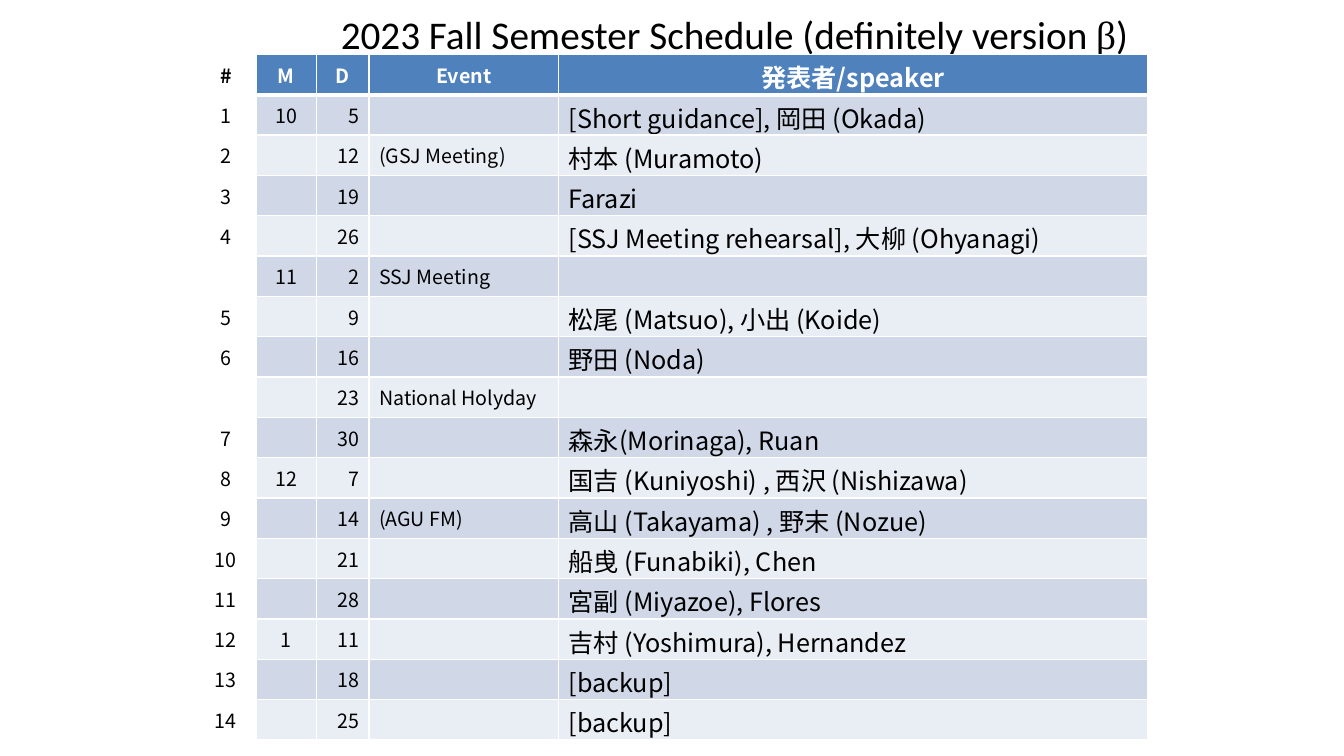
from dataclasses import dataclass

from lxml.etree import SubElement
from pptx import Presentation
from pptx.dml.color import RGBColor
from pptx.enum.text import MSO_ANCHOR as Anchor, MSO_AUTO_SIZE as AutoSize, PP_ALIGN as Align
from pptx.oxml.ns import qn
from pptx.util import Inches, Pt


@dataclass(frozen=True)
class Theme:
    """Colours, fonts and type sizes of the schedule."""
    ink: str = "000000"
    white: str = "FFFFFF"
    header: str = "4F81BD"
    bands: tuple = ("E9EDF4", "D0D8E8")
    title_font: str = "Calibri"
    greek_font: str = "Times New Roman"
    table_font: str = "Noto Sans CJK JP"
    title_size: int = 28
    small_size: int = 14
    speaker_size: int = 18


THEME = Theme()
WIDTHS = (0.6, 0.6, 0.52, 1.88, 5.84)
ROW_HEIGHT = 0.4
ALIGNS = (Align.CENTER, Align.CENTER, Align.RIGHT, Align.LEFT, Align.LEFT)
SPEAKER = len(WIDTHS) - 1
SCHEDULE = (
    ("#", "M", "D", "Event", "発表者/speaker"),
    ("1", "10", "5", "", "[Short guidance], 岡田 (Okada)"),
    ("2", "", "12", "(GSJ Meeting)", "村本 (Muramoto)"),
    ("3", "", "19", "", "Farazi"),
    ("4", "", "26", "", "[SSJ Meeting rehearsal], 大柳 (Ohyanagi)"),
    ("", "11", "2", "SSJ Meeting", ""),
    ("5", "", "9", "", "松尾 (Matsuo), 小出 (Koide)"),
    ("6", "", "16", "", "野田 (Noda)"),
    ("", "", "23", "National Holyday", ""),
    ("7", "", "30", "", "森永(Morinaga), Ruan"),
    ("8", "12", "7", "", "国吉 (Kuniyoshi) , 西沢 (Nishizawa)"),
    ("9", "", "14", "(AGU FM)", "高山 (Takayama) , 野末 (Nozue)"),
    ("10", "", "21", "", "船曵 (Funabiki), Chen"),
    ("11", "", "28", "", "宮副 (Miyazoe), Flores"),
    ("12", "1", "11", "", "吉村 (Yoshimura), Hernandez"),
    ("13", "", "18", "", "[backup]"),
    ("14", "", "25", "", "[backup]"),
)


def add_span(para, text, font, size, colour, bold=False):
    """Add one formatted run, with its East Asian font."""
    span = para.add_run()
    span.text = text
    span.font.name = font
    span.font.size = Pt(size)
    span.font.bold = bold
    span.font.color.rgb = RGBColor.from_string(colour)
    latin = span.font._element.find(qn("a:latin"))
    east_asian = latin.makeelement(qn("a:ea"), {"typeface": font})
    latin.addnext(east_asian)


def add_borders(cell, row):
    """Draw white cell borders, thick below the header."""
    properties = cell._tc.get_or_add_tcPr()
    widths = {"L": 1, "R": 1, "T": 3 if row == 1 else 1, "B": 3 if row == 0 else 1}
    for side, width in widths.items():
        line = SubElement(properties, qn(f"a:ln{side}"), w=str(Pt(width)))
        fill = SubElement(line, qn("a:solidFill"))
        SubElement(fill, qn("a:srgbClr"), val=THEME.white)


def fill_cell(cell, text, row, column):
    """Format one schedule cell and write its text."""
    is_header, is_number = row == 0, column == 0
    add_borders(cell, row)
    band = THEME.header if is_header else THEME.bands[row % 2]
    cell.fill.solid()
    cell.fill.fore_color.rgb = RGBColor.from_string(THEME.white if is_number else band)
    cell.vertical_anchor = Anchor.MIDDLE
    cell.margin_top = Inches(0.04 if column == SPEAKER else 0)
    cell.margin_bottom = 0
    if text:
        para = cell.text_frame.paragraphs[0]
        para.alignment = Align.CENTER if is_header else ALIGNS[column]
        size = THEME.speaker_size if column == SPEAKER else THEME.small_size
        colour = THEME.white if is_header and not is_number else THEME.ink
        add_span(para, text, THEME.table_font, size, colour, is_header)


def add_title(page, left, top, width, height):
    """Place the slide title in the given box."""
    title = page.shapes.title
    title.left, title.top, title.width, title.height = map(Inches, (left, top, width, height))
    frame = title.text_frame
    frame.word_wrap = False
    frame.auto_size = AutoSize.SHAPE_TO_FIT_TEXT
    para = frame.paragraphs[0]
    para.alignment = Align.LEFT
    for text, font in (
        ("2023 Fall Semester Schedule (definitely version ", THEME.title_font),
        ("β", THEME.greek_font),
        (")", THEME.title_font),
    ):
        add_span(para, text, font, THEME.title_size, THEME.ink)


def add_schedule(page, left, top):
    """Build the schedule table from its top left corner."""
    box = map(Inches, (left, top, sum(WIDTHS), ROW_HEIGHT * len(SCHEDULE)))
    table = page.shapes.add_table(len(SCHEDULE), len(WIDTHS), *box).table
    for column, width in zip(table.columns, WIDTHS):
        column.width = Inches(width)
    for row, entries in enumerate(SCHEDULE):
        table.rows[row].height = Inches(ROW_HEIGHT)
        for column, text in enumerate(entries):
            fill_cell(table.cell(row, column), text, row, column)


def main():
    """Build and save the schedule deck."""
    deck = Presentation()
    deck.slide_width, deck.slide_height = Inches(13.33), Inches(7.5)
    page = deck.slides.add_slide(deck.slide_layouts[5])
    add_title(page, 3.28, 0.05, 8.1, 0.57)
    add_schedule(page, 1.94, 0.54)
    deck.save("out.pptx")


if __name__ == "__main__":
    main()
